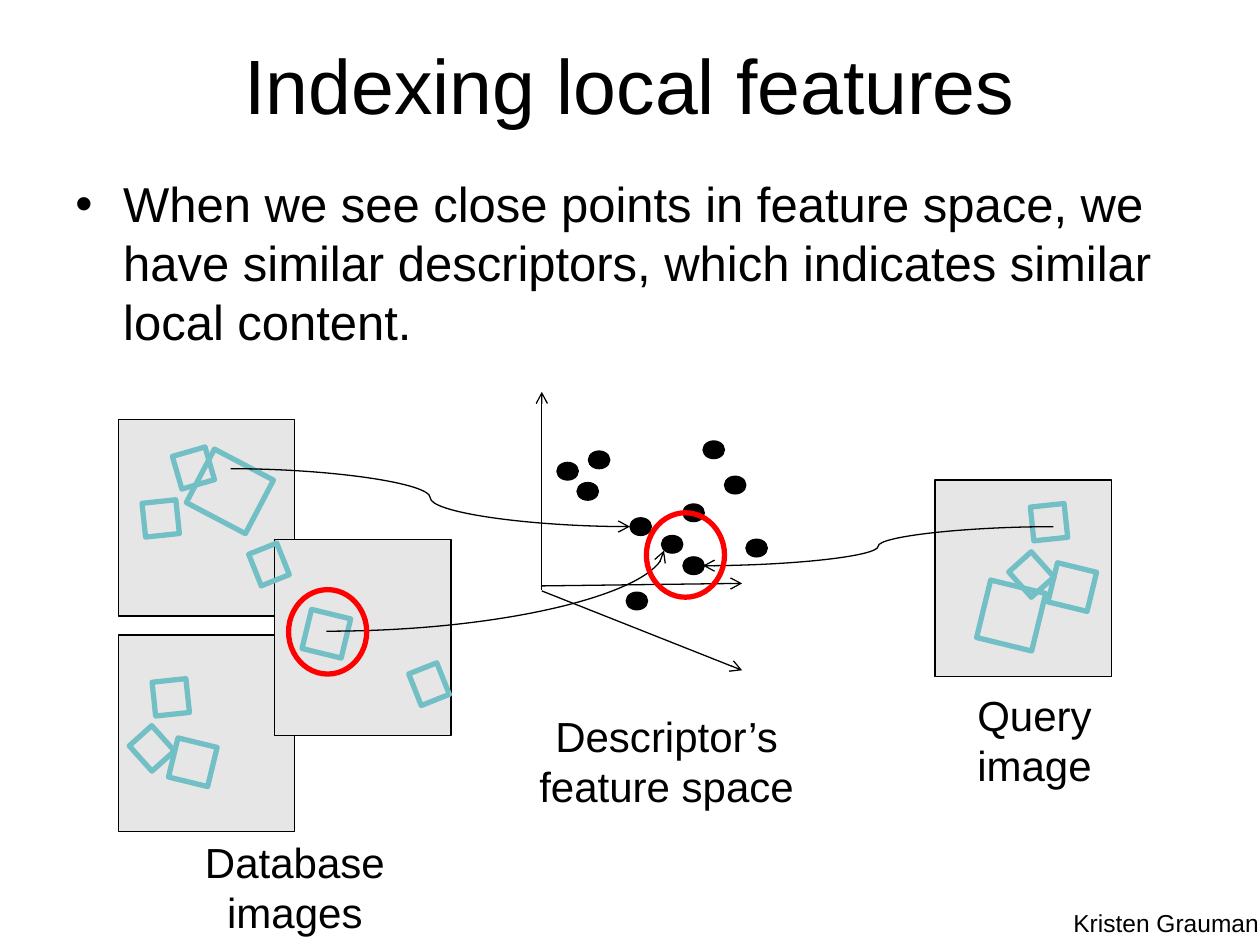
"""Build the slide on indexing local features in a descriptor space."""
from dataclasses import dataclass

from lxml import etree
from pptx import Presentation
from pptx.dml.color import RGBColor
from pptx.enum.shapes import MSO_CONNECTOR, MSO_SHAPE
from pptx.enum.text import MSO_ANCHOR, PP_ALIGN
from pptx.oxml.ns import qn
from pptx.shapes.autoshape import Shape
from pptx.shapes.connector import Connector
from pptx.shapes.shapetree import SlideShapes
from pptx.util import Pt

PX = 9144
RECT, OVAL = MSO_SHAPE.RECTANGLE, MSO_SHAPE.OVAL
STRAIGHT, CURVE = MSO_CONNECTOR.STRAIGHT, MSO_CONNECTOR.CURVE
LEFT, CENTER = PP_ALIGN.LEFT, PP_ALIGN.CENTER
TOP, MIDDLE = MSO_ANCHOR.TOP, MSO_ANCHOR.MIDDLE


@dataclass(frozen=True)
class Theme:
    """Colours, font and sizes of the slide."""
    ink: str = "000000"
    image: str = "E6E6E6"
    feature: str = "72BFC5"
    match: str = "FF0000"
    font: str = "Arial"
    title: int = 44
    body: int = 28
    caption: int = 24
    credit: int = 14
    thin: float = 0.75
    thick: float = 3


@dataclass(frozen=True)
class Box:
    """A place on the slide in px, turned by degrees."""
    left: int
    top: int
    width: int
    height: int
    turn: float = 0


@dataclass(frozen=True)
class Label:
    """Wording with its place and type."""
    text: str
    box: Box
    size: int
    align: PP_ALIGN = CENTER
    anchor: MSO_ANCHOR = TOP


@dataclass(frozen=True)
class Arrow:
    """An arrow between two points in px."""
    start: tuple[int, int]
    end: tuple[int, int]
    kind: MSO_CONNECTOR = STRAIGHT
    bend: str = ""


THEME = Theme()
IMAGES = [Box(x, y, 140, 156) for x, y in ((94, 333), (94, 504), (218, 428), (742, 381))]
FEATURES = [
    Box(140, 358, 27, 27, 73.8), Box(156, 366, 53, 48, 27.7),
    Box(107, 582, 27, 24, 48.1), Box(114, 398, 27, 27, 84),
    Box(200, 436, 27, 24, 68.3), Box(122, 540, 27, 27, 84),
    Box(327, 531, 27, 24, 68.3), Box(137, 589, 32, 32, 13.7),
    Box(243, 487, 32, 32, 13.7), Box(805, 444, 27, 24, 48.1),
    Box(819, 401, 27, 27, 84), Box(835, 450, 32, 32, 13.7),
    Box(780, 465, 45, 47, 13.7),
]
DESCRIPTORS = [Box(x, y, 17, 14) for x, y in (
    (442, 367), (458, 383), (467, 358), (500, 411), (525, 425), (542, 400),
    (558, 350), (575, 378), (592, 428), (497, 470), (542, 442))]
MATCHES = [Box(x, y, 62, 67) for x, y in ((513, 407), (229, 468))]
AXES = [
    Arrow((430, 465), (589, 463)),
    Arrow((430, 468), (430, 311)),
    Arrow((430, 469), (589, 532)),
]
MAPPINGS = [
    Arrow((183, 372), (500, 418), CURVE),
    Arrow((259, 501), (527, 437), CURVE, "curvedConnector2"),
    Arrow((836, 418), (558, 449), CURVE),
]
BULLET = Label(
    "When we see close points in feature space, we have similar descriptors, "
    "which indicates similar local content.",
    Box(50, 133, 950, 408), THEME.body, LEFT)
LABELS = [
    Label("Indexing local features", Box(50, 4, 900, 125), THEME.title, CENTER, MIDDLE),
    Label("Descriptor’s feature space", Box(400, 559, 258, 91), THEME.caption),
    Label("Database images", Box(105, 659, 258, 91), THEME.caption),
    Label("Query image", Box(717, 542, 208, 91), THEME.caption),
    Label("Kristen Grauman", Box(842, 716, 208, 34), THEME.credit, LEFT),
]


def apply(target: object, values: dict[str, object]) -> None:
    """Set each named format value on the target."""
    for name, value in values.items():
        setattr(target, name, value)


def emu(box: Box) -> tuple[int, ...]:
    """Give left, top, width and height in EMU."""
    return tuple(n * PX for n in (box.left, box.top, box.width, box.height))


def draw_shape(shapes: SlideShapes, kind: MSO_SHAPE, box: Box, line: str,
               width: float, fill: str = "") -> Shape:
    """Draw an outlined shape, filled when a fill is given."""
    figure = shapes.add_shape(kind, *emu(box))
    figure.rotation = box.turn
    figure.shadow.inherit = False
    if fill:
        figure.fill.solid()
        figure.fill.fore_color.rgb = RGBColor.from_string(fill)
    else:
        figure.fill.background()
    figure.line.color.rgb = RGBColor.from_string(line)
    figure.line.width = Pt(width)
    return figure


def draw_arrow(shapes: SlideShapes, arrow: Arrow) -> Connector:
    """Draw a thin connector with an open arrowhead at its end."""
    link = shapes.add_connector(
        arrow.kind, *(n * PX for n in (*arrow.start, *arrow.end)))
    link.line.color.rgb = RGBColor.from_string(THEME.ink)
    link.line.width = Pt(THEME.thin)
    properties = link._element.spPr
    etree.SubElement(properties.find(qn("a:ln")), qn("a:tailEnd"), type="arrow")
    etree.SubElement(properties, qn("a:effectLst"))
    if arrow.bend:
        properties.find(qn("a:prstGeom")).set("prst", arrow.bend)
    return link


def draw_label(shapes: SlideShapes, label: Label) -> Shape:
    """Write a label in a wrapping text box."""
    holder = shapes.add_textbox(*emu(label.box))
    frame = holder.text_frame
    apply(frame, {"word_wrap": True, "vertical_anchor": label.anchor,
                  "text": label.text})
    paragraph = frame.paragraphs[0]
    paragraph.alignment = label.align
    apply(paragraph.runs[0].font, {"name": THEME.font, "size": Pt(label.size)})
    paragraph.runs[0].font.color.rgb = RGBColor.from_string(THEME.ink)
    return holder


def draw_bullet(shapes: SlideShapes, label: Label) -> None:
    """Write a label as a bullet with a hanging indent."""
    paragraph = draw_label(shapes, label).text_frame.paragraphs[0]
    paragraph.space_before = Pt(label.size * 0.2)
    properties = paragraph._p.get_or_add_pPr()
    indent = 38 * PX
    properties.set("marL", str(indent))
    properties.set("indent", str(-indent))
    etree.SubElement(properties, qn("a:buFont"), typeface=THEME.font)
    etree.SubElement(properties, qn("a:buChar"), char="•")


def main() -> None:
    """Build and save the slide."""
    deck = Presentation()
    apply(deck, {"slide_width": 1000 * PX, "slide_height": 750 * PX})
    shapes = deck.slides.add_slide(deck.slide_layouts[6]).shapes
    draw_bullet(shapes, BULLET)
    for image in IMAGES:
        draw_shape(shapes, RECT, image, THEME.ink, THEME.thin, THEME.image)
    for feature in FEATURES:
        draw_shape(shapes, RECT, feature, THEME.feature, THEME.thick)
    for descriptor in DESCRIPTORS:
        draw_shape(shapes, OVAL, descriptor, THEME.ink, THEME.thin, THEME.ink)
    for arrow in AXES + MAPPINGS:
        draw_arrow(shapes, arrow)
    for match in MATCHES:
        draw_shape(shapes, OVAL, match, THEME.match, THEME.thick)
    for label in LABELS:
        draw_label(shapes, label)
    deck.save("out.pptx")


if __name__ == "__main__":
    main()
